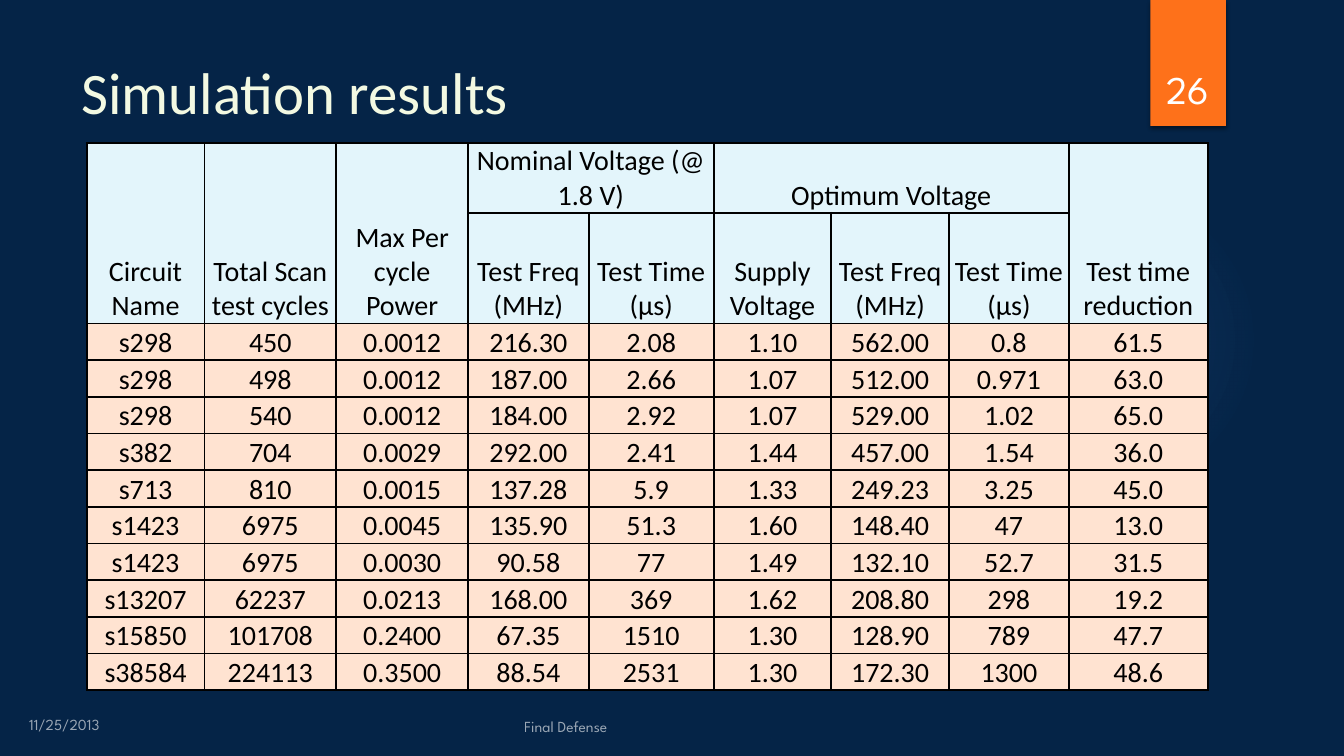
from dataclasses import dataclass

from lxml.etree import SubElement
from pptx import Presentation
from pptx.dml.color import RGBColor as RGB
from pptx.enum.shapes import MSO_SHAPE as SHAPE
from pptx.enum.text import MSO_ANCHOR as ANCHOR, PP_ALIGN as ALIGN
from pptx.oxml import parse_xml
from pptx.oxml.ns import nsdecls, qn
from pptx.util import Inches, Pt


@dataclass(frozen=True)
class Theme:
    background: str = "052447"
    glow: str = "5DA4F4"
    accent: str = "FE711A"
    title: str = "F3F9E2"
    light: str = "FFFFFF"
    dark: str = "000000"
    head_fill: str = "E3F5FB"
    body_fill: str = "FFE3D1"
    body_font: str = "Calibri"
    label_font: str = "League Spartan"
    title_size: int = 42
    number_size: int = 28
    table_size: int = 20
    footer_size: int = 11
    border: float = 1.5


THEME = Theme()
COLUMNS = [1.17, 1.31, 1.31, 1.2, 1.24, 1.17, 1.17, 1.19, 1.38]
HEAD_ROWS = [0.69, 1.1]
HEADINGS = [
    (0, 0, 2, 1, "Circuit Name"),
    (0, 1, 2, 1, "Total Scan test cycles"),
    (0, 2, 2, 1, "Max Per cycle Power"),
    (0, 3, 1, 2, "Nominal Voltage (@ 1.8 V)"),
    (0, 5, 1, 3, "Optimum Voltage"),
    (0, 8, 2, 1, "Test time reduction"),
    (1, 3, 1, 1, "Test Freq (MHz)"),
    (1, 4, 1, 1, "Test Time (µs)"),
    (1, 5, 1, 1, "Supply Voltage"),
    (1, 6, 1, 1, "Test Freq (MHz)"),
    (1, 7, 1, 1, "Test Time (µs)"),
]
RESULTS = [line.split() for line in """\
s298 450 0.0012 216.30 2.08 1.10 562.00 0.8 61.5
s298 498 0.0012 187.00 2.66 1.07 512.00 0.971 63.0
s298 540 0.0012 184.00 2.92 1.07 529.00 1.02 65.0
s382 704 0.0029 292.00 2.41 1.44 457.00 1.54 36.0
s713 810 0.0015 137.28 5.9 1.33 249.23 3.25 45.0
s1423 6975 0.0045 135.90 51.3 1.60 148.40 47 13.0
s1423 6975 0.0030 90.58 77 1.49 132.10 52.7 31.5
s13207 62237 0.0213 168.00 369 1.62 208.80 298 19.2
s15850 101708 0.2400 67.35 1510 1.30 128.90 789 47.7
s38584 224113 0.3500 88.54 2531 1.30 172.30 1300 48.6""".splitlines()]


def inches(box):
    return [Inches(v) for v in box]


def style(p, font, size, color, align=ALIGN.LEFT):
    p.alignment = align
    p.font.name, p.font.size = font, Pt(size)
    p.font.color.rgb = RGB.from_string(color)


def add_text(slide, box, text, font, size, color, align=ALIGN.LEFT,
             anchor=ANCHOR.TOP, alpha=None):
    tf = slide.shapes.add_textbox(*inches(box)).text_frame
    tf.word_wrap, tf.vertical_anchor = True, anchor
    p = tf.paragraphs[0]
    p.text = text
    style(p, font, size, color, align)
    if alpha:
        for clr in p._p.iter(qn("a:srgbClr")):
            SubElement(clr, qn("a:alpha"), val=str(alpha * 1000))


def add_plain(slide, kind, box, color):
    sp = slide.shapes.add_shape(kind, *inches(box))
    sp.shadow.inherit = False
    sp.fill.solid()
    sp.fill.fore_color.rgb = RGB.from_string(color)
    sp.line.fill.background()
    return sp


def add_glow(slide, box):
    sp = add_plain(slide, SHAPE.OVAL, box, THEME.glow)
    stops = "".join(
        f'<a:gs pos="{pos * 1000}"><a:srgbClr val="{THEME.glow}">'
        f'<a:alpha val="{alpha * 1000}"/></a:srgbClr></a:gs>'
        for pos, alpha in [(0, 7), (36, 6), (69, 0), (100, 0)])
    grad = parse_xml(
        f'<a:gradFill {nsdecls("a")}><a:gsLst>{stops}</a:gsLst><a:path path="circle">'
        '<a:fillToRect l="50000" t="50000" r="50000" b="50000"/></a:path></a:gradFill>')
    spPr = sp._element.spPr
    spPr.replace(spPr.find(qn("a:solidFill")), grad)


def add_page_tab(slide, box, number):
    sp = add_plain(slide, SHAPE.RECTANGLE, box, THEME.accent)
    effects = sp._element.spPr.find(qn("a:effectLst"))
    effects.append(parse_xml(
        f'<a:outerShdw {nsdecls("a")} blurRad="{Pt(3)}" dist="{Pt(2)}" dir="5400000" '
        f'rotWithShape="0"><a:srgbClr val="{THEME.dark}"><a:alpha val="45000"/>'
        '</a:srgbClr></a:outerShdw>'))
    x, y, w, h = box
    add_text(slide, (x - 0.09, y + 0.32, w + 0.17, h - 0.41), number, THEME.label_font,
             THEME.number_size, THEME.light, ALIGN.CENTER, ANCHOR.BOTTOM)


def format_cell(cell, fill):
    cell.fill.solid()
    cell.fill.fore_color.rgb = RGB.from_string(fill)
    cell.vertical_anchor = ANCHOR.BOTTOM
    cell.margin_left = cell.margin_right = cell.margin_top = Inches(0.01)
    cell.margin_bottom = 0
    style(cell.text_frame.paragraphs[0], THEME.body_font, THEME.table_size,
          THEME.dark, ALIGN.CENTER)
    for i, side in enumerate(("lnL", "lnR", "lnT", "lnB")):
        cell._tc.tcPr.insert(i, parse_xml(
            f'<a:{side} {nsdecls("a")} w="{Pt(THEME.border)}"><a:solidFill>'
            f'<a:srgbClr val="{THEME.dark}"/></a:solidFill></a:{side}>'))


def add_results(slide, box):
    heads = len(HEAD_ROWS)
    frame = slide.shapes.add_table(heads + len(RESULTS), len(COLUMNS), *inches(box))
    table = frame.table
    body_row = (box[3] - sum(HEAD_ROWS)) / len(RESULTS)
    for column, width in zip(table.columns, COLUMNS):
        column.width = Inches(width * box[2] / sum(COLUMNS))
    for row, height in zip(table.rows, HEAD_ROWS + [body_row] * len(RESULTS)):
        row.height = Inches(height)
    for r, c, rows, cols, text in HEADINGS:
        cell = table.cell(r, c)
        cell.text = text
        if rows * cols > 1:
            cell.merge(table.cell(r + rows - 1, c + cols - 1))
    for r, values in enumerate(RESULTS, heads):
        for c, value in enumerate(values):
            table.cell(r, c).text = value
    for r, row in enumerate(table.rows):
        for cell in row.cells:
            format_cell(cell, THEME.head_fill if r < heads else THEME.body_fill)


def add_footer(slide, box):
    x, y, w, h = box
    look = THEME.label_font, THEME.footer_size, THEME.light
    add_text(slide, (x, y, 1.08, h), "11/25/2013", *look,
             anchor=ANCHOR.MIDDLE, alpha=60)
    add_text(slide, (x + w - 4.22, y, 4.22, h), "Final Defense ", *look,
             ALIGN.CENTER, ANCHOR.BOTTOM, 60)


def main():
    prs = Presentation()
    prs.slide_width, prs.slide_height = Inches(13.33), Inches(7.5)
    slide = prs.slides.add_slide(prs.slide_layouts[6])
    slide.background.fill.solid()
    slide.background.fill.fore_color.rgb = RGB.from_string(THEME.background)
    add_glow(slide, (9.41, 1.83, 3.08, 3.08))
    add_page_tab(slide, (11.41, 0, 0.75, 1.25), "26")
    add_text(slide, (0.71, 0.5, 10.29, 1.53), "Simulation results",
             THEME.body_font, THEME.title_size, THEME.title)
    add_results(slide, (0.86, 1.42, 11.12, 5.43))
    add_footer(slide, (0.19, 7.02, 7.55, 0.33))
    prs.save("out.pptx")


if __name__ == "__main__":
    main()
